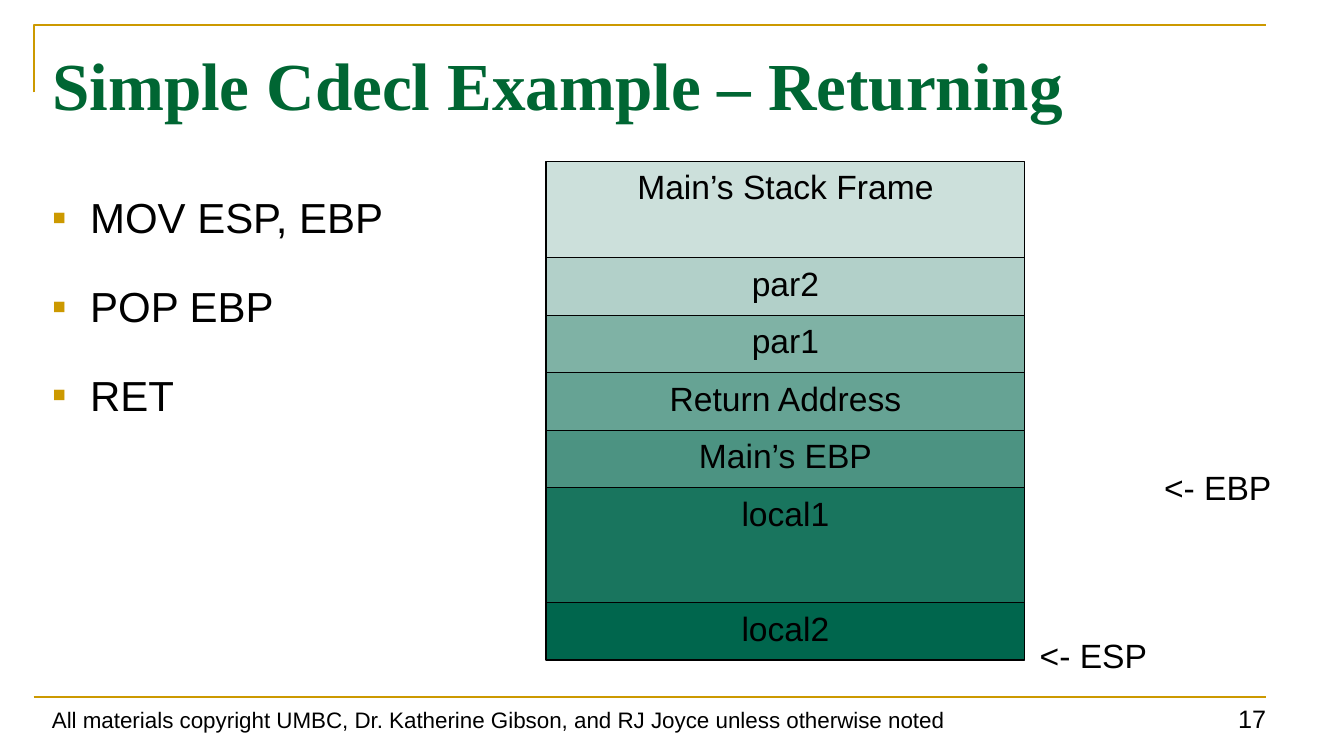
from lxml.etree import SubElement as Sub
from pptx import Presentation
from pptx.dml.color import RGBColor as RGB
from pptx.enum.shapes import MSO_CONNECTOR as Conn, MSO_SHAPE as Shape
from pptx.enum.text import MSO_ANCHOR as Anchor, MSO_AUTO_SIZE as Fit, PP_ALIGN as Align
from pptx.oxml.ns import qn
from pptx.util import Inches, Pt

COLORS = {"ink": "000000", "gold": "CC9900", "title": "006633", "stack": "00664D"}
COLS, ROWS = 160, 90


def hue(name):
    return RGB.from_string(COLORS[name])


class Deck:
    """Style and current slide; lengths are cells of a 160 by 90 grid."""

    def __init__(self):
        self.show = Presentation()
        self.show.slide_width, self.show.slide_height = Inches(13.333), Inches(7.5)
        self.cell = self.show.slide_height / ROWS
        self.slide = self.show.slides.add_slide(self.show.slide_layouts[5])
        self.shapes = self.slide.shapes

    def grid(self, *cells):
        return [round(n * self.cell) for n in cells]

    def style(self, para, size, color="ink", font="Arial", bold=False, align=Align.LEFT):
        para.font.size, para.font.name, para.font.bold = Pt(size), font, bold
        para.font.color.rgb = hue(color)
        para.alignment = align

    def stroke(self, item, color, width):
        item.line.color.rgb = hue(color)
        item.line.width = Pt(width)

    def title(self, text, box):
        item = self.shapes.title
        item.left, item.top, item.width, item.height = self.grid(*box)
        frame = item.text_frame
        frame.text = text
        frame.auto_size, frame.vertical_anchor = Fit.NONE, Anchor.TOP
        frame.margin_top = Inches(0.13)
        self.style(frame.paragraphs[0], 48, "title", "Times New Roman", True)

    def text(self, text, box, size, anchor=Anchor.TOP, wrap=True, align=Align.LEFT):
        frame = self.shapes.add_textbox(*self.grid(*box)).text_frame
        frame.text = text
        frame.word_wrap, frame.vertical_anchor = wrap, anchor
        for para in frame.paragraphs:
            self.style(para, size, align=align)
        return frame

    def bullets(self, items, box):
        for para in self.text("\n".join(items), box, 30).paragraphs:
            para.line_spacing, para.space_before = 1.5, Pt(9.5)
            props = para._p.get_or_add_pPr()
            props.set("marL", str(Inches(0.38)))
            props.set("indent", str(-Inches(0.38)))
            tint = Sub(props, qn("a:buClr"))
            Sub(tint, qn("a:srgbClr"), val=COLORS["gold"])
            Sub(props, qn("a:buFont"), typeface="Arial")
            Sub(props, qn("a:buChar"), char="▪")

    def block(self, text, box, alpha):
        """Add a stack cell whose fill is alpha percent opaque."""
        item = self.shapes.add_shape(Shape.RECTANGLE, *self.grid(*box))
        item.shadow.inherit = False
        item.fill.solid()
        item.fill.fore_color.rgb = hue("stack")
        if alpha < 100:
            tint = item._element.spPr.find(qn("a:solidFill")).find(qn("a:srgbClr"))
            Sub(tint, qn("a:alpha"), val=str(alpha * 1000))
        self.stroke(item, "ink", 0.75)
        frame = item.text_frame
        frame.text, frame.vertical_anchor = text, Anchor.TOP
        self.style(frame.paragraphs[0], 24, align=Align.CENTER)

    def rule(self, *ends):
        item = self.shapes.add_connector(Conn.STRAIGHT, *self.grid(*ends))
        self.stroke(item, "gold", 1.5)
        Sub(item._element.spPr, qn("a:effectLst"))

    def corner(self, start, *points):
        path = self.shapes.build_freeform(*self.grid(*start))
        path.add_line_segments([self.grid(*p) for p in points], close=False)
        item = path.convert_to_shape()
        item.shadow.inherit = False
        item.fill.background()
        self.stroke(item, "gold", 1.5)


STACK = [("Main’s Stack Frame", 11.5, 20), ("par2", 6.84, 30), ("par1", 6.84, 50),
         ("Return Address", 6.84, 60), ("Main’s EBP", 6.84, 70),
         ("local1", 13.68, 90), ("local2", 6.84, 100)]


def main():
    deck = Deck()
    left, right, top = 4, 150.75, 19.2
    deck.corner((left, 11), (left, 3), (right, 3))
    deck.rule(left, 83, right, 83)
    deck.text("All materials copyright UMBC, Dr. Katherine Gibson, and RJ Joyce "
              "unless otherwise noted", (5, 82, 124, 5.9), 16, Anchor.BOTTOM)
    deck.text("17", (134.6, 82, 17.3, 5.9), 18, Anchor.BOTTOM, align=Align.RIGHT)
    deck.title("Simple Cdecl Example – Returning", (5, 3.6, 146.9, 13.3))
    deck.bullets(["MOV ESP, EBP", "POP EBP", "RET"], (5, top, 53, 61.2))
    for name, tall, alpha in STACK:
        deck.block(name, (65, top, 57, tall), alpha)
        top += tall
    for name, x, y in [("<- ESP", 122.6, 75), ("<- EBP", 137.4, 55)]:
        deck.text(name, (x, y, 15.4, 6), 24, wrap=False).auto_size = Fit.SHAPE_TO_FIT_TEXT
    deck.show.save("out.pptx")


if __name__ == "__main__":
    main()
